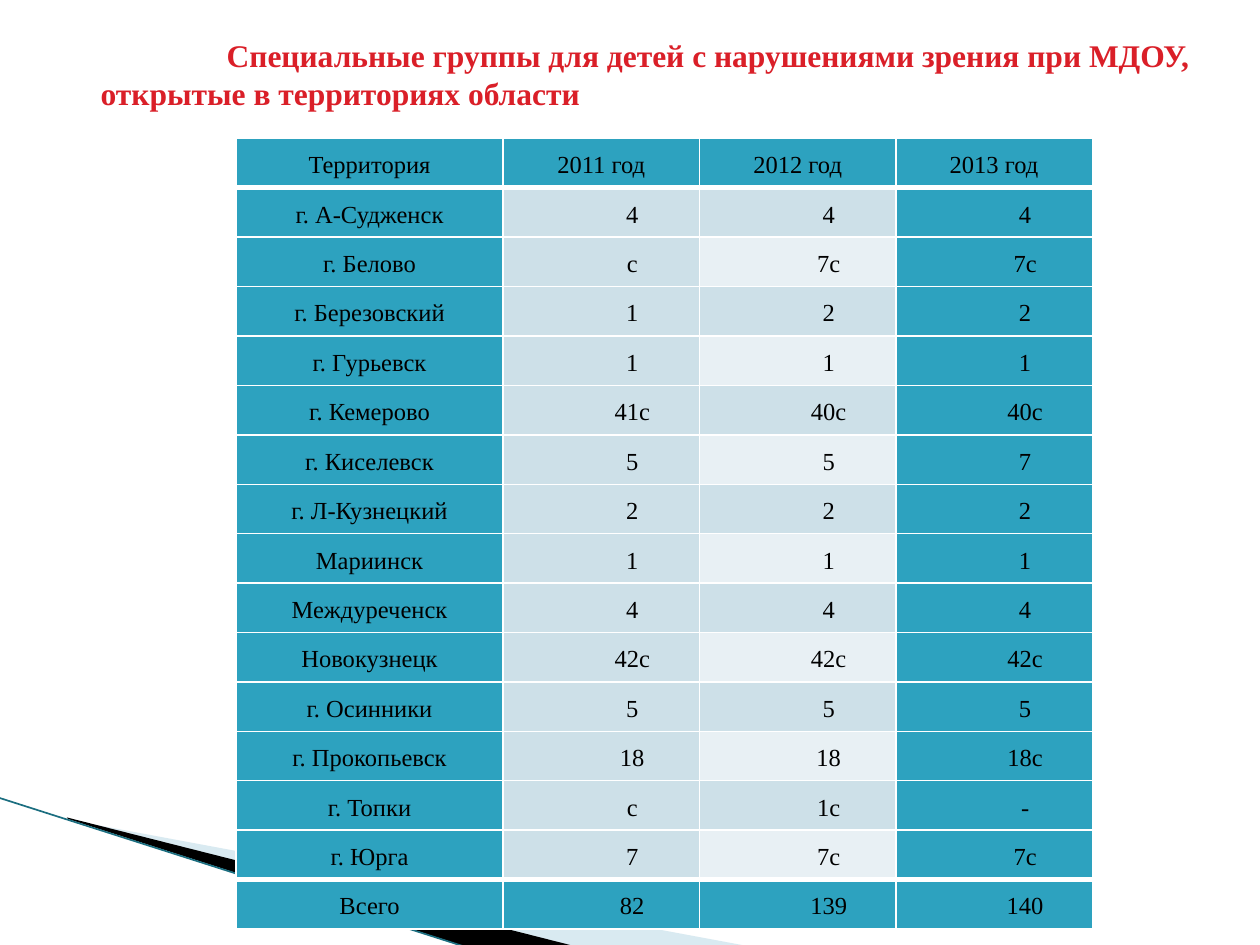
from lxml import etree
from pptx import Presentation
from pptx import util as u
from pptx.dml.color import RGBColor
from pptx.enum import shapes, text
from pptx.oxml.ns import qn

Cm, Pt = u.Cm, u.Pt

BLACK = RGBColor(0x00, 0x00, 0x00)
WHITE = RGBColor(0xFF, 0xFF, 0xFF)
RED = RGBColor(0xDA, 0x1F, 0x28)
TEAL = RGBColor(0x2D, 0xA2, 0xBF)
DARK_TEAL = RGBColor(0x1B, 0x6E, 0x80)
SKY = RGBColor(0xA0, 0xCB, 0xDC)
BAND = RGBColor(0xCD, 0xE0, 0xE8)
PALE_BAND = RGBColor(0xE8, 0xF0, 0xF4)

TITLE = [
    ["\t", "Специальные группы для детей с нарушениями зрения при МДОУ,"],
    ["открытые в территориях области"],
]
ROWS = [
    ("Территория", "2011 год", "2012 год", "2013 год"),
    ("г. А-Судженск", "4", "4", "4"),
    ("г. Белово", "с", "7с", "7с"),
    ("г. Березовский", "1", "2", "2"),
    ("г. Гурьевск", "1", "1", "1"),
    ("г. Кемерово", "41с", "40с", "40с"),
    ("г. Киселевск", "5", "5", "7"),
    ("г. Л-Кузнецкий", "2", "2", "2"),
    ("Мариинск", "1", "1", "1"),
    ("Междуреченск", "4", "4", "4"),
    ("Новокузнецк", "42с", "42с", "42с"),
    ("г. Осинники", "5", "5", "5"),
    ("г. Прокопьевск", "18", "18", "18с"),
    ("г. Топки", "с", "1с", "-"),
    ("г. Юрга", "7", "7с", "7с"),
    ("Всего", "82", "139", "140"),
]
LAST = len(ROWS) - 1


class PageBuilder:
    font_name = "Times New Roman"
    title_size = Pt(18)
    cell_size = Pt(14)
    value_indent = Cm(1.25)

    def __init__(self, page):
        self.page = page

    def span(self, para, words, size, color, bold=False):
        span = para.add_run()
        span.text = words
        font = span.font
        font.name, font.size, font.bold = self.font_name, size, bold
        font.color.rgb = color

    def wedge(self, frame, points, color, opacity=100):
        """Draw a closed, unlined outline; its points may lie outside the frame."""
        corners = [(Cm(x), Cm(y)) for x, y in points]
        builder = self.page.shapes.build_freeform(*corners[0])
        builder.add_line_segments(corners[1:], close=True)
        shape = builder.convert_to_shape()
        self.reframe(shape, *(Cm(length) for length in frame))
        shape.shadow.inherit = False
        shape.line.fill.background()
        shape.fill.solid()
        shape.fill.fore_color.rgb = color
        if opacity < 100:
            tint = shape.fill._xPr.find(".//" + qn("a:srgbClr"))
            etree.SubElement(tint, qn("a:alpha"), val=str(opacity * 1000))

    def reframe(self, shape, left, top, width, height):
        """Give a freeform another frame while its outline stays in place."""
        shift_x, shift_y = shape.left - left, shape.top - top
        outline = shape._element.find(".//" + qn("a:path"))
        outline.set("w", str(width))
        outline.set("h", str(height))
        for point in outline.iter(qn("a:pt")):
            point.set("x", str(int(point.get("x")) + shift_x))
            point.set("y", str(int(point.get("y")) + shift_y))
        shape.left, shape.top = left, top
        shape.width, shape.height = width, height

    def line(self, x1, y1, x2, y2, color, width):
        line = self.page.shapes.add_connector(
            shapes.MSO_CONNECTOR.STRAIGHT, Cm(x1), Cm(y1), Cm(x2), Cm(y2))
        line.line.color.rgb = color
        line.line.width = Pt(width)
        etree.SubElement(line._element.spPr, qn("a:effectLst"))

    def title(self, left, top, width, height, lines):
        box = self.page.shapes.add_textbox(Cm(left), Cm(top), Cm(width), Cm(height))
        frame = box.text_frame
        frame.word_wrap = True
        for number, words in enumerate(lines):
            para = frame.add_paragraph() if number else frame.paragraphs[0]
            para.alignment = text.PP_ALIGN.JUSTIFY
            tabs = etree.SubElement(para._p.get_or_add_pPr(), qn("a:tabLst"))
            etree.SubElement(tabs, qn("a:tab"), pos=str(Cm(2.54)), algn="l")
            for part in words:
                self.span(para, part, self.title_size, RED, bold=True)

    def borders(self, cell, row):
        """Rule the cell in white, thicker below the heading and above the total."""
        heavy = {("lnB", 0), ("lnT", 1), ("lnB", LAST - 1), ("lnT", LAST)}
        properties = cell._tc.get_or_add_tcPr()
        for side in ("lnL", "lnR", "lnT", "lnB"):
            width = Pt(3 if (side, row) in heavy else 1)
            edge = etree.SubElement(properties, qn("a:" + side), w=str(width))
            fill = etree.SubElement(edge, qn("a:solidFill"))
            etree.SubElement(fill, qn("a:srgbClr"), val=str(WHITE))

    def cell(self, cell, words, row, column):
        cell.margin_left = cell.margin_right = Cm(0.18)
        cell.margin_top = cell.margin_bottom = 0
        self.borders(cell, row)
        cell.fill.solid()
        cell.fill.fore_color.rgb = cell_color(row, column)
        para = cell.text_frame.paragraphs[0]
        para.alignment = text.PP_ALIGN.CENTER
        para.line_spacing = 1.5
        if row and column:
            para._p.get_or_add_pPr().set("indent", str(self.value_indent))
        self.span(para, words, self.cell_size, BLACK)

    def table(self, left, top, widths, height, rows):
        table = self.page.shapes.add_table(
            len(rows), len(widths), Cm(left), Cm(top),
            Cm(sum(widths)), Cm(height)).table
        table.horz_banding = False
        for column, width in zip(table.columns, widths):
            column.width = Cm(width)
        for row, values in enumerate(rows):
            for column, words in enumerate(values):
                self.cell(table.cell(row, column), words, row, column)


def cell_color(row, column):
    if row in (0, LAST) or column in (0, 3):
        return TEAL
    return PALE_BAND if column == 2 and row % 2 == 0 else BAND


def main():
    deck = Presentation()
    deck.slide_width, deck.slide_height = Cm(25.4), Cm(19.05)
    builder = PageBuilder(deck.slides.add_slide(deck.slide_layouts[6]))

    builder.wedge((1.98, 13.89, 10.57, 4.01),
                  [(1.4, 16.53), (15.11, 19.08), (11.58, 19.08), (1.4, 16.51)],
                  SKY, opacity=40)
    builder.wedge((-0.15, 16.08, 10.57, 2.34),
                  [(1.35, 16.48), (11.61, 19.08), (9.45, 19.1), (1.37, 16.51)],
                  BLACK)
    builder.line(-0.03, 16.08, 9.42, 19.1, DARK_TEAL, 0.95)
    builder.title(1.78, 0.6, 23.42, 1.8, TITLE)
    builder.table(4.76, 2.79, [5.38] + [3.96] * 3, 15.95, ROWS)

    deck.save("out.pptx")


if __name__ == "__main__":
    main()
